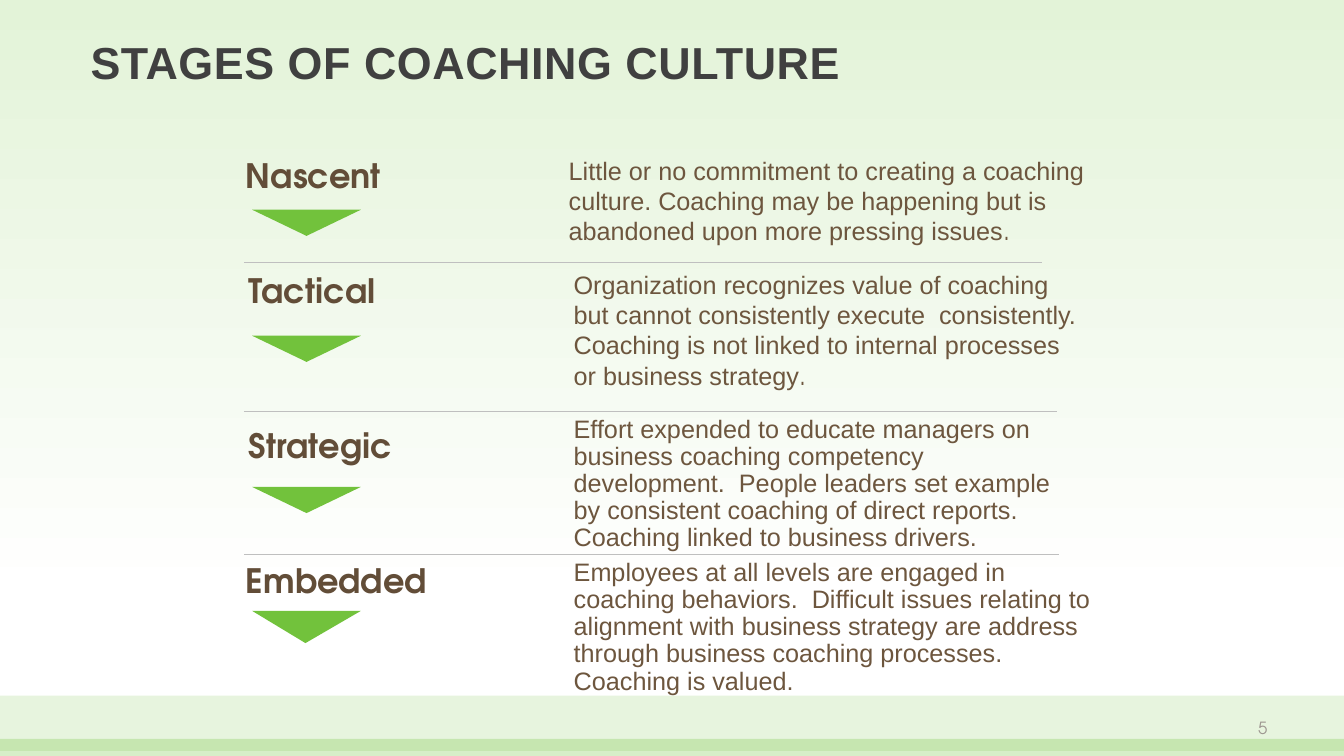
from collections import namedtuple
from dataclasses import dataclass

from lxml import etree
from pptx import Presentation
from pptx.dml.color import RGBColor
from pptx.enum.shapes import MSO_CONNECTOR, MSO_SHAPE
from pptx.enum.text import MSO_ANCHOR, PP_ALIGN
from pptx.oxml.ns import qn
from pptx.util import Inches, Pt

RECTANGLE = MSO_SHAPE.RECTANGLE
TRIANGLE = MSO_SHAPE.ISOSCELES_TRIANGLE
STRAIGHT = MSO_CONNECTOR.STRAIGHT
TOP, MIDDLE = MSO_ANCHOR.TOP, MSO_ANCHOR.MIDDLE
LEFT, RIGHT = PP_ALIGN.LEFT, PP_ALIGN.RIGHT


@dataclass(frozen=True)
class Theme:
    green: str = "72C23C"
    pale_green: str = "E3F3D8"
    white: str = "FFFFFF"
    title: str = "404040"
    stage: str = "624D38"
    description: str = "6D563E"
    rule: str = "BFBFBF"
    number: str = "9E9791"
    body_font: str = "Arial"
    stage_font: str = "TeX Gyre Adventor"
    title_size: int = 32
    stage_size: int = 24
    description_size: int = 18
    number_size: int = 12


THEME = Theme()
WIDE_INSETS = (0.1, 0.05)
NARROW_INSETS = (0.07, 0.04)
LABEL_LEFT = 2.37
RULE_LEFT = 2.42
ARROW_LEFT, ARROW_WIDTH = 2.5, 1.08

Stage = namedtuple(
    "Stage",
    "name label_top insets description left top width height spacing "
    "full_stop arrow_top arrow_height",
)

STAGES = [
    Stage("Nascent", 1.5, NARROW_INSETS,
          "Little or no commitment to creating a coaching culture. "
          "Coaching may be happening but is abandoned upon more pressing issues",
          5.57, 1.5, 5.38, 0.98, None, ".", 2.08, 0.26),
    Stage("Tactical", 2.63, WIDE_INSETS,
          "Organization recognizes value of coaching but cannot consistently "
          "execute  consistently.  Coaching is not linked to internal processes "
          "or business strategy",
          5.62, 2.63, 5.2, 1.28, None, ".", 3.33, 0.26),
    Stage("Strategic", 4.17, WIDE_INSETS,
          "Effort expended to educate managers on business coaching competency "
          "development.  People leaders set example by consistent coaching of "
          "direct reports.  Coaching linked to business drivers.",
          5.62, 4.09, 5.16, 1.43, 0.9, "", 4.83, 0.26),
    Stage("Embedded", 5.51, NARROW_INSETS,
          "Employees at all levels are engaged in coaching behaviors.  Difficult "
          "issues relating to alignment with business strategy are address "
          "through business coaching processes.  Coaching is valued.",
          5.62, 5.51, 5.28, 1.43, 0.9, "", 6.06, 0.32),
]
RULES = [(2.6, 10.33), (4.08, 10.48), (5.5, 10.5)]


def color(value):
    return RGBColor.from_string(value)


def paint_background(slide):
    fill = slide.background.fill
    fill.gradient()
    fill.gradient_angle = 270
    stops = ((0, THEME.pale_green), (0.79, THEME.white))
    for stop, (position, value) in zip(fill.gradient_stops, stops):
        stop.position = position
        stop.color.rgb = color(value)


def add_solid(slide, kind, left, top, width, height, opacity=100):
    shape = slide.shapes.add_shape(
        kind, Inches(left), Inches(top), Inches(width), Inches(height))
    shape.shadow.inherit = False
    shape.fill.solid()
    shape.fill.fore_color.rgb = color(THEME.green)
    shape.line.fill.background()
    if opacity < 100:
        fill_color = shape.fill._xPr.find(f".//{qn('a:srgbClr')}")
        etree.SubElement(fill_color, qn("a:alpha"), val=str(opacity * 1000))
    return shape


def add_rule(slide, top, right):
    connector = slide.shapes.add_connector(
        STRAIGHT, Inches(RULE_LEFT), Inches(top), Inches(right), Inches(top))
    connector.line.color.rgb = color(THEME.rule)
    connector.line.width = Pt(0.75)
    etree.SubElement(connector._element.spPr, qn("a:effectLst"))


def format_run(run, font, size, value, bold=False):
    run.font.name = font
    run.font.size = Pt(size)
    run.font.color.rgb = color(value)
    run.font.bold = bold


def add_text(slide, text, box, font, size, value, bold=False,
             insets=WIDE_INSETS, align=LEFT, anchor=TOP):
    shape = slide.shapes.add_textbox(*(Inches(length) for length in box))
    frame = shape.text_frame
    frame.word_wrap = True
    frame.vertical_anchor = anchor
    frame.margin_left = frame.margin_right = Inches(insets[0])
    frame.margin_top = frame.margin_bottom = Inches(insets[1])
    frame.text = text
    paragraph = frame.paragraphs[0]
    paragraph.alignment = align
    format_run(paragraph.runs[0], font, size, value, bold)
    return paragraph


def add_stage(slide, stage):
    add_text(slide, stage.name, (LABEL_LEFT, stage.label_top, 3.6, 0.5),
             THEME.stage_font, THEME.stage_size, THEME.stage, True, stage.insets)
    paragraph = add_text(
        slide, stage.description,
        (stage.left, stage.top, stage.width, stage.height),
        THEME.body_font, THEME.description_size, THEME.description,
        insets=NARROW_INSETS)
    paragraph.line_spacing = stage.spacing
    if stage.full_stop:
        run = paragraph.add_run()
        run.text = stage.full_stop
        format_run(run, THEME.stage_font, THEME.description_size,
                   THEME.description)
    arrow = add_solid(slide, TRIANGLE, ARROW_LEFT, stage.arrow_top,
                      ARROW_WIDTH, stage.arrow_height)
    arrow.rotation = 180
    return arrow


def add_title(slide):
    paragraph = add_text(
        slide, "STAGES OF COACHING CULTURE", (0.8, 0.3, 11.6, 0.57),
        THEME.body_font, THEME.title_size, THEME.title, True)
    paragraph.runs[0].font._element.set("spc", "40")


def main():
    presentation = Presentation()
    presentation.slide_width = Inches(13.33)
    presentation.slide_height = Inches(7.5)
    slide = presentation.slides.add_slide(presentation.slide_layouts[6])
    paint_background(slide)
    add_solid(slide, RECTANGLE, 0, 6.9, 13.33, 0.55, opacity=17)
    add_solid(slide, RECTANGLE, 0, 7.33, 13.33, 0.17, opacity=28)
    arrows = [add_stage(slide, stage) for stage in STAGES]
    arrows[-1].adjustments[0] = 0.51
    for top, right in RULES:
        add_rule(slide, top, right)
    add_title(slide)
    add_text(slide, "5", (9.56, 7.02, 3.11, 0.4), THEME.stage_font,
             THEME.number_size, THEME.number, align=RIGHT, anchor=MIDDLE)
    presentation.save("out.pptx")


if __name__ == "__main__":
    main()
